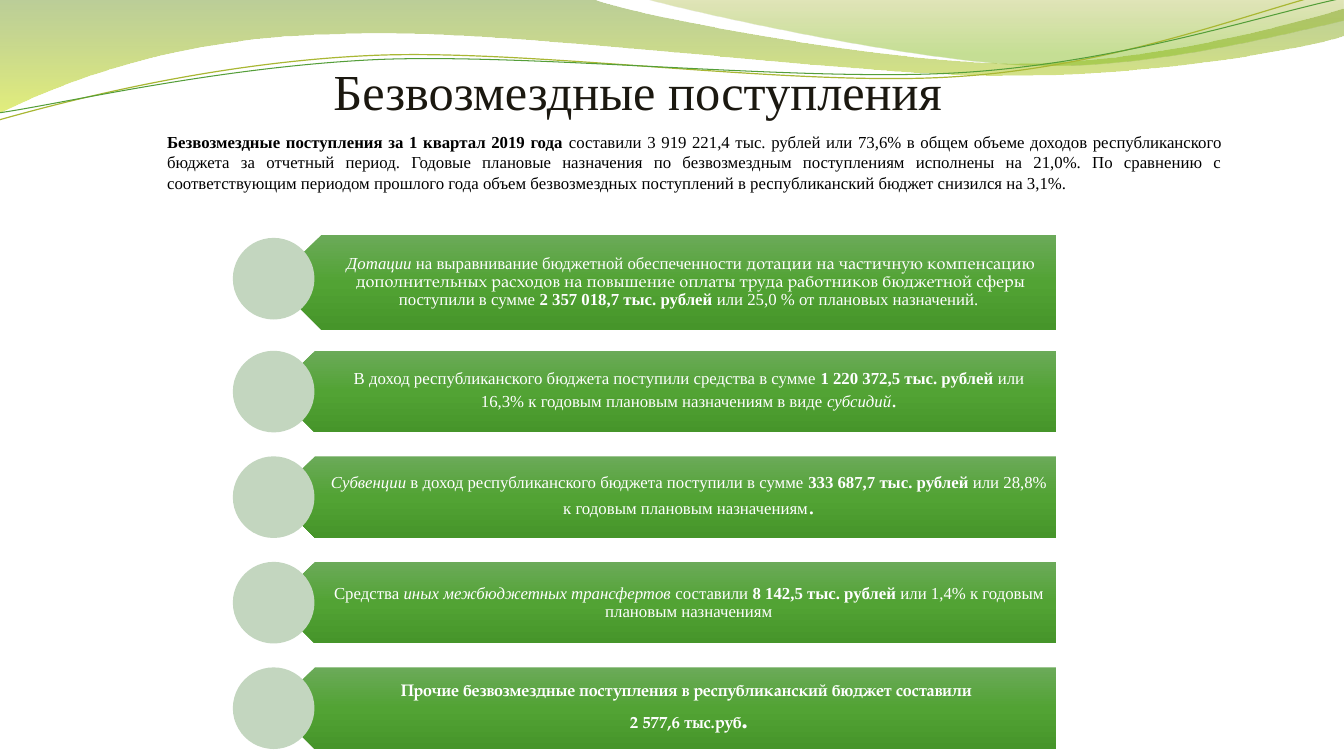
from lxml.etree import SubElement
from pptx import Presentation
from pptx.dml.color import RGBColor
from pptx.enum.shapes import MSO_SHAPE
from pptx.enum.text import MSO_ANCHOR, MSO_AUTO_SIZE, PP_ALIGN
from pptx.oxml.ns import qn
from pptx.util import Inches, Pt

COLORS = {
    "title": "1B1810", "body": "000000", "white": "FFFFFF", "circle": "C3D6BF",
    "olive line": "A9B733", "green line": "549E39",
}
PLATE_STOPS = [(0, "6BAA59", 100), (50, "52A334", 100), (100, "46952A", 100)]
SERIF, PAGELLA = "Times New Roman", "TeX Gyre Pagella"
UNITS_PER_INCH = 1000

# A two-number entry is a straight segment, a six-number entry a cubic curve
WAVES = [
    ([(0, 0), (5.87, -0.01), (6.34, 0.17, 8.84, 0.63, 10.11, 0.63),
      (11.37, 0.63, 12.77, 0.26, 13.33, 0.09), (13.34, 0.36),
      (13.11, 0.44, 11.59, 0.76, 9.94, 0.75), (8.29, 0.75, 5.09, 0.28, 3.43, 0.34),
      (1.72, 0.36, 0.61, 0.83, -0.02, 1.13)],
     [(0, "69921C", 45), (100, "CCE10F", 55)], None),
    ([(6.38, -0.01), (6.79, 0.11, 9.09, 0.62, 10.25, 0.65),
      (11.4, 0.69, 12.82, 0.32, 13.33, 0.21), (13.33, 0)],
     [(0, "9BAA1A", 30), (80, "81BA16", 45)], None),
    ([(-0.01, 1.19), (0.63, 1.01, 2.1, 0.62, 3.69, 0.55),
      (5.27, 0.48, 7.89, 0.87, 9.49, 0.76), (11.1, 0.66, 12.51, 0.08, 13.3, -0.1)],
     None, ("olive line", 0.85)),
    ([(-0.01, 1.12), (0.62, 1.03, 2.18, 0.66, 3.77, 0.59),
      (5.37, 0.53, 7.96, 0.82, 9.55, 0.72), (11.14, 0.62, 12.55, 0.14, 13.33, -0.02)],
     None, ("green line", 0.75)),
]

# Each run: text, style letters (b, i), font, size
INTRO = [
    ("Безвозмездные поступления за 1 квартал 2019 года", "b", SERIF, 12),
    (" составили 3 919 221,4 тыс. рублей или 73,6% в общем объеме доходов "
     "республиканского бюджета за отчетный период. Годовые плановые назначения по "
     "безвозмездным поступлениям исполнены на 21,0%. По сравнению с соответствующим "
     "периодом прошлого года объем безвозмездных поступлений в республиканский бюджет "
     "снизился на 3,1%. ", "", SERIF, 12),
]
ROWS = [
    [[("Дотации", "i", SERIF, 12),
      (" на выравнивание бюджетной обеспеченности ", "", SERIF, 12),
      ("дотации на частичную компенсацию дополнительных расходов на повышение "
       "оплаты труда работников бюджетной сферы ", "", PAGELLA, 12),
      ("поступили в сумме ", "", SERIF, 12),
      ("2 357 018,7 тыс. рублей", "b", SERIF, 12),
      (" или 25,0 % от плановых назначений. ", "", SERIF, 12)]],
    [[("В доход республиканского бюджета поступили средства в сумме ", "", SERIF, 12),
      ("1 220 372,5 тыс. рублей ", "b", SERIF, 12),
      ("или 16,3% к годовым плановым назначениям в виде ", "", SERIF, 12),
      ("субсидий", "i", SERIF, 12),
      (".", "", SERIF, 16)]],
    [[("Субвенции", "i", SERIF, 12),
      (" в доход республиканского бюджета поступили в сумме ", "", SERIF, 12),
      ("333 687,7 тыс. рублей", "b", SERIF, 12),
      (" или 28,8% к годовым плановым назначениям", "", SERIF, 12),
      (".", "", SERIF, 18)]],
    [[("Средства ", "", SERIF, 12),
      ("иных межбюджетных трансфертов", "i", SERIF, 12),
      (" составили ", "", SERIF, 12),
      ("8 142,5 тыс. рублей ", "b", SERIF, 12),
      ("или 1,4% к годовым плановым назначениям", "", SERIF, 12)]],
    [[("Прочие безвозмездные поступления в республиканский бюджет составили ",
       "b", PAGELLA, 12)],
     [("2 577,6 тыс.руб", "b", PAGELLA, 12), (".", "b", PAGELLA, 19)]],
]


def fill_gradient(shape, stops, angle):
    """Fill with (position, colour, opacity) stops in percent; 270 runs downwards."""
    shape.fill.gradient()
    shape.fill.gradient_angle = angle
    stop_list = shape._element.spPr.find(qn("a:gradFill")).find(qn("a:gsLst"))
    for old_stop in list(stop_list):
        stop_list.remove(old_stop)
    for position, color, opacity in stops:
        stop = SubElement(stop_list, qn("a:gs"), pos=str(position * 1000))
        rgb = SubElement(stop, qn("a:srgbClr"), val=color)
        if opacity < 100:
            SubElement(rgb, qn("a:alpha"), val=str(opacity * 1000))


def add_runs(paragraph, runs, color):
    for text, style, font_name, size in runs:
        run = paragraph.add_run()
        run.text = text
        run.font.name = font_name
        run.font.size = Pt(size)
        run.font.bold = "b" in style
        run.font.italic = "i" in style
        run.font.color.rgb = RGBColor.from_string(COLORS[color])


presentation = Presentation()
presentation.slide_width = Inches(40 / 3)
presentation.slide_height = Inches(7.5)
slide = presentation.slides.add_slide(presentation.slide_layouts[6])
shapes = slide.shapes

# Wave decoration: straight outline first, then its segments bent into curves
for segments, stops, line in WAVES:
    segments = [[round(value * UNITS_PER_INCH) for value in segment]
                for segment in segments]
    anchors = [segment[-2:] for segment in segments]
    left = min(x for x, y in anchors)
    top = min(y for x, y in anchors)
    builder = shapes.build_freeform(*anchors[0], scale=Inches(1) / UNITS_PER_INCH)
    builder.add_line_segments(anchors[1:], close=line is None)
    wave = builder.convert_to_shape()
    straight_parts = list(wave._element.iter(qn("a:lnTo")))
    for straight, segment in zip(straight_parts, segments[1:]):
        if len(segment) == 6:
            curve = SubElement(straight.getparent(), qn("a:cubicBezTo"))
            for x, y in zip(segment[::2], segment[1::2]):
                SubElement(curve, qn("a:pt"), x=str(x - left), y=str(y - top))
            straight.getparent().replace(straight, curve)
    wave.shadow.inherit = False
    if line:
        color, width = line
        wave.fill.background()
        wave.line.color.rgb = RGBColor.from_string(COLORS[color])
        wave.line.width = Pt(width)
    else:
        fill_gradient(wave, stops, 270)
        wave.line.fill.background()

# Title and introduction
title = shapes.add_textbox(Inches(3.21), Inches(0.55), Inches(6.3), Inches(0.71))
title.text_frame.word_wrap = False
title.text_frame.auto_size = MSO_AUTO_SIZE.SHAPE_TO_FIT_TEXT
add_runs(title.text_frame.paragraphs[0],
         [("Безвозмездные поступления", "", SERIF, 36)], "title")

intro = shapes.add_textbox(Inches(1.56), Inches(1.26), Inches(10.67), Inches(0.71))
intro.text_frame.word_wrap = True
intro.text_frame.auto_size = MSO_AUTO_SIZE.SHAPE_TO_FIT_TEXT
intro.text_frame.paragraphs[0].alignment = PP_ALIGN.JUSTIFY
add_runs(intro.text_frame.paragraphs[0], INTRO, "body")

# Rows: arrow plate, text, circle; the first plate is taller
circle_size = 0.81
for index, paragraphs in enumerate(ROWS):
    if index == 0:
        top, height, circle_top, text_left = 2.33, 0.94, 2.36, 2.96
    else:
        top = circle_top = 3.48 + 1.047 * (index - 1)
        height, text_left = circle_size, 2.92

    plate = shapes.add_shape(MSO_SHAPE.PENTAGON, Inches(2.72), Inches(top),
                             Inches(7.76), Inches(height))
    plate.rotation = 180
    plate.shadow.inherit = False
    fill_gradient(plate, PLATE_STOPS, 90)
    plate.line.fill.background()

    label = shapes.add_textbox(Inches(text_left), Inches(top),
                               Inches(10.48 - text_left), Inches(height))
    frame = label.text_frame
    frame.word_wrap = True
    frame.vertical_anchor = MSO_ANCHOR.MIDDLE
    frame.margin_left, frame.margin_right = Inches(0.36), Inches(0.09)
    frame.margin_top = frame.margin_bottom = Inches(0.05)
    for number, runs in enumerate(paragraphs):
        paragraph = frame.add_paragraph() if number else frame.paragraphs[0]
        paragraph.alignment = PP_ALIGN.CENTER
        paragraph.line_spacing = 0.9
        paragraph.space_after = Pt(4.2)
        add_runs(paragraph, runs, "white")

    circle = shapes.add_shape(MSO_SHAPE.OVAL, Inches(2.31), Inches(circle_top),
                              Inches(circle_size), Inches(circle_size))
    circle.shadow.inherit = False
    circle.fill.solid()
    circle.fill.fore_color.rgb = RGBColor.from_string(COLORS["circle"])
    circle.line.fill.background()

presentation.save("out.pptx")
